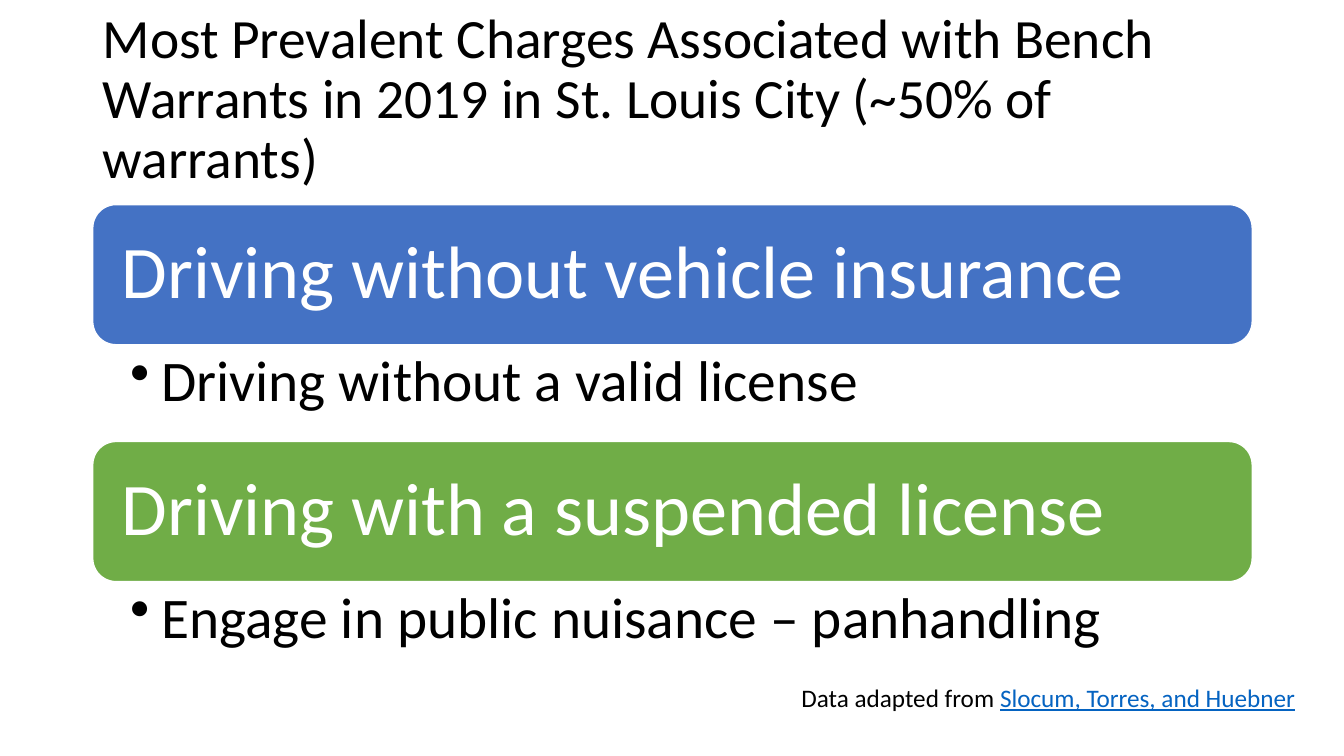
from pptx import Presentation
from pptx.dml.color import RGBColor as RGB
from pptx.enum.shapes import MSO_SHAPE as SHAPE
from pptx.enum.text import MSO_ANCHOR as ANCHOR
from pptx.oxml.ns import qn
from pptx.util import Inches, Pt
from lxml.etree import SubElement

COLORS = {"text": "000000", "white": "FFFFFF", "blue": "4472C4",
          "green": "70AD47", "link": "0563C1"}
FONT = "Calibri"
LEFT, WIDTH = 0.92, 11.5
CHARGES_TOP, BANNER_H, DETAIL_H = 2.03, 1.39, 0.96
CHARGES = [
    ("blue", "Driving without vehicle insurance", "Driving without a valid license"),
    ("green", "Driving with a suspended license", "Engage in public nuisance – panhandling"),
]


def style(r, size, color):
    r.font.name = FONT
    r.font.size = Pt(size)
    r.font.color.rgb = RGB.from_string(COLORS[color])


def set_text(sp, text, size, color, spacing=0.9, insets=(0.1, 0.05, 0.1, 0.05),
             anchor=ANCHOR.TOP):
    tf = sp.text_frame
    tf.word_wrap = True
    tf.vertical_anchor = anchor
    tf.margin_left, tf.margin_top, tf.margin_right, tf.margin_bottom = map(Inches, insets)
    tf.text = text
    p = tf.paragraphs[0]
    p.line_spacing = spacing
    style(p.runs[0], size, color)
    return p


def add_box(s, box):
    return s.shapes.add_textbox(*map(Inches, box))


def add_title(s, box, text):
    set_text(add_box(s, box), text, 39.6, "text", anchor=ANCHOR.MIDDLE)


def add_banner(s, box, fill, text):
    sp = s.shapes.add_shape(SHAPE.ROUNDED_RECTANGLE, *map(Inches, box))
    sp.shadow.inherit = False
    sp.fill.solid()
    sp.fill.fore_color.rgb = RGB.from_string(COLORS[fill])
    sp.line.color.rgb = RGB.from_string(COLORS["white"])
    sp.line.width = Pt(1)
    p = set_text(sp, text, 53, "white", insets=(0.22,) * 4, anchor=ANCHOR.MIDDLE)
    p.alignment = 1


def add_detail(s, box, text):
    p = set_text(add_box(s, box), text, 41, "text", insets=(0.37, 0.07, 0.41, 0.07))
    pPr = p._p.get_or_add_pPr()
    pPr.set("marL", str(Inches(0.31)))
    pPr.set("indent", str(-Inches(0.31)))
    SubElement(pPr, qn("a:buChar")).set("char", "•")


def add_charge(s, box, fill, banner, detail):
    x, y, w, h = box
    add_banner(s, (x, y, w, BANNER_H), fill, banner)
    add_detail(s, (x, y + BANNER_H, w, h - BANNER_H), detail)


def add_credit(s, box, lead, authors):
    p = set_text(add_box(s, box), lead, 18, "text", spacing=1.0)
    r = p.add_run()
    r.text = authors
    style(r, 18, "link")
    r.font.underline = True


def main():
    prs = Presentation()
    prs.slide_width, prs.slide_height = Inches(13.33), Inches(7.5)
    s = prs.slides.add_slide(prs.slide_layouts[6])
    add_title(s, (LEFT, 0.15, 11.61, 1.7),
              "Most Prevalent Charges Associated with Bench Warrants "
              "in 2019 in St. Louis City (~50% of warrants)")
    charge_h = BANNER_H + DETAIL_H
    for i, charge in enumerate(CHARGES):
        add_charge(s, (LEFT, CHARGES_TOP + i * charge_h, WIDTH, charge_h), *charge)
    add_credit(s, (7.85, 6.72, 5.3, 0.4), "Data adapted from ", "Slocum, Torres, and Huebner")
    prs.save("out.pptx")


if __name__ == "__main__":
    main()
